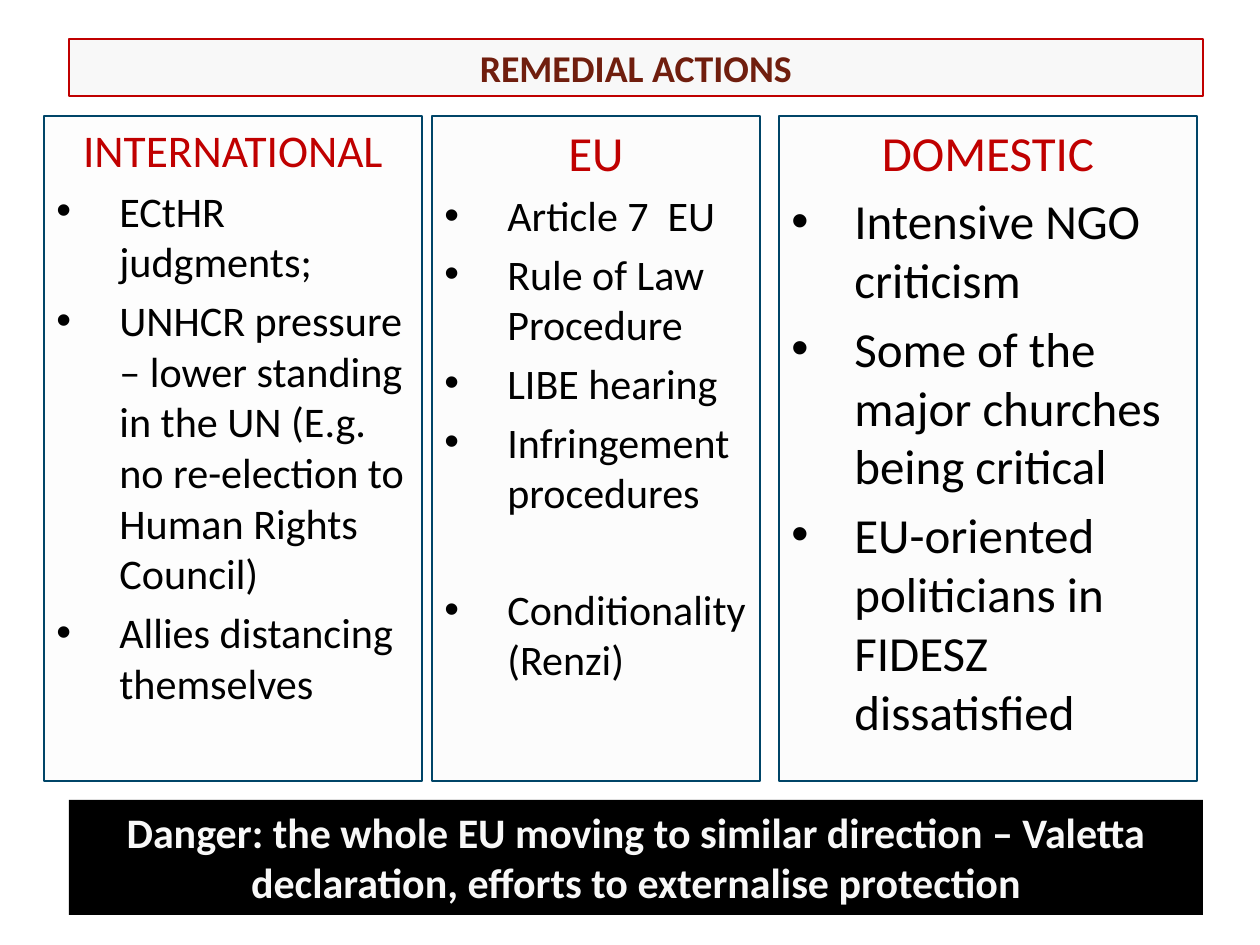
import pptx
import pptx.dml.color
import pptx.enum.shapes
import pptx.enum.text
import pptx.oxml.ns
import pptx.util
from lxml import etree

PIXEL = pptx.util.Inches(1) / 126
FONT = "Calibri"
ALIGN = pptx.enum.text.PP_ALIGN
ANCHOR = pptx.enum.text.MSO_ANCHOR

BANNER_LEFT, BANNER_WIDTH = 69, 1134
COLUMN_TOP, COLUMN_HEIGHT = 116, 665
BULLET_INDENT = 63
SECTION_GAP = 38

COLUMNS = [
    {
        "left": 44, "width": 378, "opacity": 8,
        "heading": "INTERNATIONAL", "heading_size": 25.9, "item_size": 24.1,
        "items": [
            "ECtHR judgments;",
            "UNHCR pressure – lower standing in the UN "
            "(E.g. no re-election to Human Rights Council)",
            "Allies distancing themselves",
        ],
    },
    {
        "left": 432, "width": 328, "opacity": 19,
        "heading": "EU", "heading_size": 28, "item_size": 24,
        "items": [
            "Article 7  EU",
            "Rule of Law Procedure",
            "LIBE hearing",
            "Infringement procedures",
            "Conditionality (Renzi)",
        ],
        "set_apart": "Conditionality (Renzi)",
    },
    {
        "left": 779, "width": 418, "opacity": 19,
        "heading": "DOMESTIC", "heading_size": 28, "item_size": 28,
        "items": [
            "Intensive NGO criticism",
            "Some of the major churches being critical",
            "EU-oriented politicians in FIDESZ dissatisfied",
        ],
    },
]


def px(length):
    return round(length * PIXEL)


def set_color(color_format, value):
    color_format.rgb = pptx.dml.color.RGBColor.from_string(value)


def add_child(parent, tag, **attributes):
    child = etree.SubElement(parent, pptx.oxml.ns.qn(tag))
    for name, value in attributes.items():
        child.set(name, str(value))
    return child


def add_box(slide, box, fill, opacity=100, line=None, line_width=0.75, anchor=ANCHOR.TOP):
    shape = slide.shapes.add_shape(
        pptx.enum.shapes.MSO_SHAPE.RECTANGLE, *[px(length) for length in box]
    )
    shape.shadow.inherit = False
    shape.fill.solid()
    set_color(shape.fill.fore_color, fill)
    if opacity < 100:
        color = shape.fill._xPr.find(".//" + pptx.oxml.ns.qn("a:srgbClr"))
        add_child(color, "a:alpha", val=opacity * 1000)
    if line:
        set_color(shape.line.color, line)
        shape.line.width = pptx.util.Pt(line_width)
    else:
        shape.line.fill.background()
    shape.text_frame.word_wrap = True
    shape.text_frame.vertical_anchor = anchor
    return shape


def write(paragraph, text, size, color, bold=False, align=ALIGN.CENTER):
    paragraph.text = text
    paragraph.alignment = align
    paragraph.font.name = FONT
    paragraph.font.size = pptx.util.Pt(size)
    paragraph.font.bold = bold
    set_color(paragraph.font.color, color)


def add_bullet(paragraph):
    properties = paragraph._p.get_or_add_pPr()
    properties.set("marL", str(px(BULLET_INDENT)))
    properties.set("indent", str(-px(BULLET_INDENT)))
    bullet_font = properties.makeelement(pptx.oxml.ns.qn("a:buFont"), {"typeface": "Arial"})
    bullet = properties.makeelement(pptx.oxml.ns.qn("a:buChar"), {"char": "•"})
    run_defaults = properties.find(pptx.oxml.ns.qn("a:defRPr"))
    run_defaults.addprevious(bullet_font)
    run_defaults.addprevious(bullet)


def add_title(slide, box):
    shape = add_box(slide, box, "F2F2F2", 50, "C00000", 1.25, ANCHOR.MIDDLE)
    write(shape.text_frame.paragraphs[0], "REMEDIAL ACTIONS", 21.6, "701E0E", bold=True)


def add_column(slide, box, column):
    shape = add_box(slide, box, "F2F2F2", column["opacity"], "004568")
    frame = shape.text_frame
    write(frame.paragraphs[0], column["heading"], column["heading_size"], "C00000")
    size = column["item_size"]
    for item in column["items"]:
        paragraph = frame.add_paragraph()
        write(paragraph, item, size, "000000", align=ALIGN.LEFT)
        gap = SECTION_GAP if item == column.get("set_apart") else round(size * 0.2, 1)
        paragraph.space_before = pptx.util.Pt(gap)
        add_bullet(paragraph)


def add_warning(slide, box):
    shape = add_box(slide, box, "000000")
    write(
        shape.text_frame.paragraphs[0],
        "Danger: the whole EU moving to similar direction – Valetta declaration, "
        "efforts to externalise protection",
        24, "F8F8F8", bold=True,
    )


def main():
    presentation = pptx.Presentation()
    presentation.slide_width = px(1260)
    presentation.slide_height = px(945)
    slide = presentation.slides.add_slide(presentation.slide_layouts[6])
    add_title(slide, (BANNER_LEFT, 39, BANNER_WIDTH, 57))
    for column in COLUMNS:
        add_column(slide, (column["left"], COLUMN_TOP, column["width"], COLUMN_HEIGHT), column)
    add_warning(slide, (BANNER_LEFT, 800, BANNER_WIDTH, 115))
    presentation.save("out.pptx")


if __name__ == "__main__":
    main()
